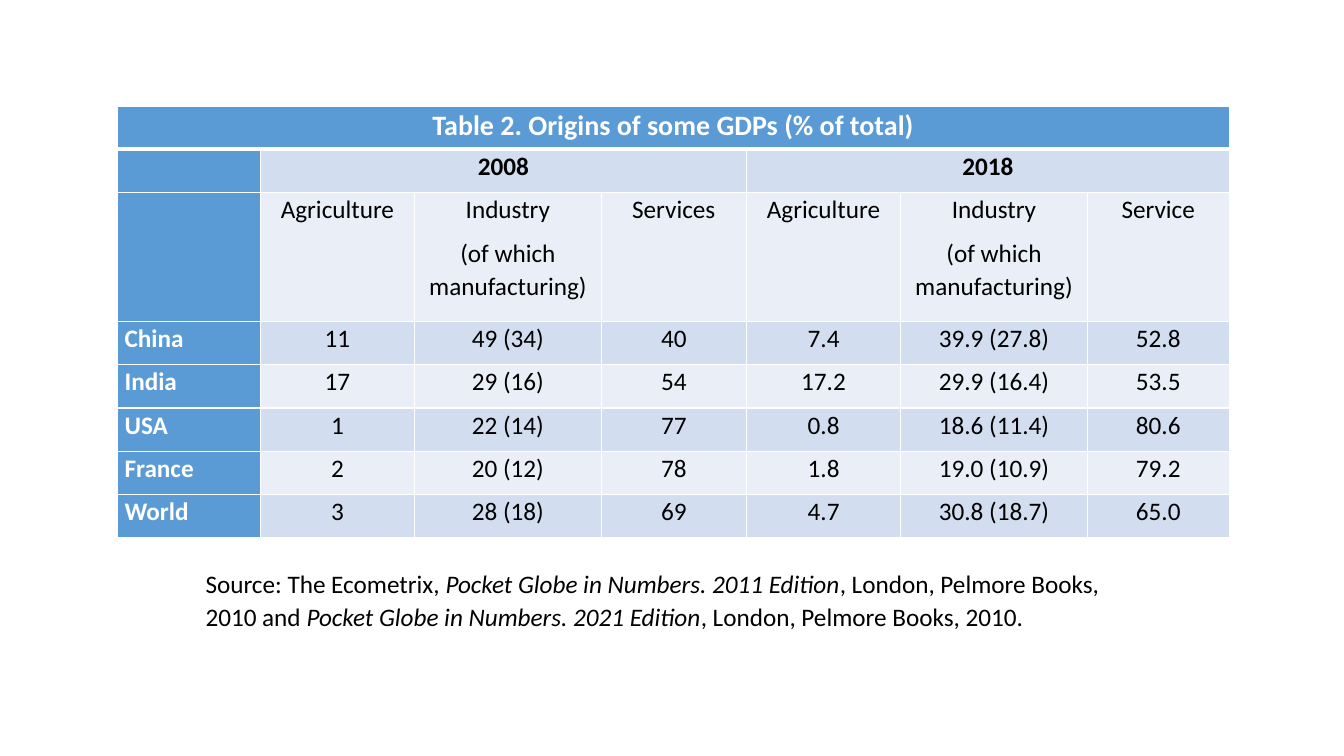
from lxml import etree
from pptx import Presentation, util as u
from pptx.dml.color import RGBColor
from pptx.enum import text
from pptx.oxml.ns import qn

COLORS = {"header": "5B9BD5", "dark band": "D2DEEF", "light band": "EAEFF7",
          "white": "FFFFFF", "black": "000000"}
FONT = "Calibri"

CAPTION = "Table 2. Origins of some GDPs (% of total)"
YEARS = {1: "2008", 4: "2018"}  # first column of each three-column group
INDUSTRY = "Industry\n(of which manufacturing)"
SECTORS = ["", "Agriculture", INDUSTRY, "Services", "Agriculture", INDUSTRY, "Service"]
SHARES = [
    ["China", "11", "49 (34)", "40", "7.4", "39.9 (27.8)", "52.8"],
    ["India", "17", "29 (16)", "54", "17.2", "29.9 (16.4)", "53.5"],
    ["USA", "1", "22 (14)", "77", "0.8", "18.6 (11.4)", "80.6"],
    ["France", "2", "20 (12)", "78", "1.8", "19.0 (10.9)", "79.2"],
    ["World", "3", "28 (18)", "69", "4.7", "30.8 (18.7)", "65.0"],
]
COLUMN_WIDTHS = [3.61, 3.89, 4.7, 3.66, 3.89, 4.7, 3.58]
ROW_HEIGHT, SECTOR_ROW_HEIGHT = 1.09, 3.25

# Source line as (words, italic)
SOURCE = [
    ("Source: The Ecometrix, ", False),
    ("Pocket Globe in Numbers. 2011 Edition", True),
    (", London, Pelmore Books, 2010 and ", False),
    ("Pocket Globe in Numbers. 2021 Edition", True),
    (", London, Pelmore Books, 2010.", False),
]


def rgb(name):
    return RGBColor.from_string(COLORS[name])


def format_paragraph(paragraph, align):
    paragraph.alignment = align
    paragraph.line_spacing = 1.07
    paragraph.space_after = u.Pt(8)


def add_run(paragraph, words, size=18, color="black", bold=False, italic=False):
    run = paragraph.add_run()
    run.text = words
    font = run.font
    font.name, font.size, font.bold, font.italic = FONT, u.Pt(size), bold, italic
    font.color.rgb = rgb(color)


def set_borders(cell, **widths):
    """Draw white borders; widths are points by side (L, R, T, B), 1 by default."""
    properties = cell._tc.get_or_add_tcPr()
    for side in "LRTB":
        line = etree.SubElement(properties, qn(f"a:ln{side}"), w=str(u.Pt(widths.get(side, 1))))
        fill = etree.SubElement(line, qn("a:solidFill"))
        etree.SubElement(fill, qn("a:srgbClr"), val=COLORS["white"])


def fill_cell(cell, row, column, words):
    is_caption, is_header = row == 0, row == 0 or column == 0
    set_borders(cell, **({"B": 3} if is_caption else {"T": 3} if row == 1 else {}))
    cell.fill.solid()
    band = "dark band" if row % 2 else "light band"
    cell.fill.fore_color.rgb = rgb("header" if is_header else band)
    cell.margin_left = cell.margin_right = u.Cm(0.19)
    cell.margin_top = cell.margin_bottom = 0
    if not words:
        return
    align = text.PP_ALIGN.LEFT if column == 0 and not is_caption else text.PP_ALIGN.CENTER
    for index, line in enumerate(words.split("\n")):
        frame = cell.text_frame
        paragraph = frame.add_paragraph() if index else frame.paragraphs[0]
        format_paragraph(paragraph, align)
        add_run(paragraph, line, size=20 if is_caption else 18,
                color="white" if is_header else "black", bold=is_header or row == 1)


def add_gdp_table(slide, left, top):
    last = len(COLUMN_WIDTHS) - 1
    year_row = [YEARS.get(column, "") for column in range(last + 1)]
    content = [[CAPTION] + [""] * last, year_row, SECTORS, *SHARES]
    heights = [SECTOR_ROW_HEIGHT if row is SECTORS else ROW_HEIGHT for row in content]

    gdp_table = slide.shapes.add_table(
        len(content), last + 1, u.Cm(left), u.Cm(top),
        u.Cm(sum(COLUMN_WIDTHS)), u.Cm(sum(heights))).table
    gdp_table.first_row = gdp_table.horz_banding = False
    for column, width in zip(gdp_table.columns, COLUMN_WIDTHS):
        column.width = u.Cm(width)
    for row, height in zip(gdp_table.rows, heights):
        row.height = u.Cm(height)

    # Caption spans the table, each year spans its three sectors
    gdp_table.cell(0, 0).merge(gdp_table.cell(0, last))
    for first in YEARS:
        gdp_table.cell(1, first).merge(gdp_table.cell(1, first + 2))
    for row, entries in enumerate(content):
        for column, words in enumerate(entries):
            fill_cell(gdp_table.cell(row, column), row, column, words)


def add_source(slide, left, top, width, height):
    source = slide.shapes.add_textbox(u.Cm(left), u.Cm(top), u.Cm(width), u.Cm(height))
    frame = source.text_frame
    frame.word_wrap = True
    frame.auto_size = text.MSO_AUTO_SIZE.SHAPE_TO_FIT_TEXT
    paragraph = frame.paragraphs[0]
    format_paragraph(paragraph, text.PP_ALIGN.LEFT)
    for words, italic in SOURCE:
        add_run(paragraph, words, italic=italic)


def main():
    deck = Presentation()
    deck.slide_width, deck.slide_height = u.Cm(33.87), u.Cm(19.05)
    slide = deck.slides.add_slide(deck.slide_layouts[6])  # blank layout
    add_gdp_table(slide, 2.95, 2.67)
    add_source(slide, 4.93, 14.15, 23.93, 1.88)
    deck.save("out.pptx")


if __name__ == "__main__":
    main()
